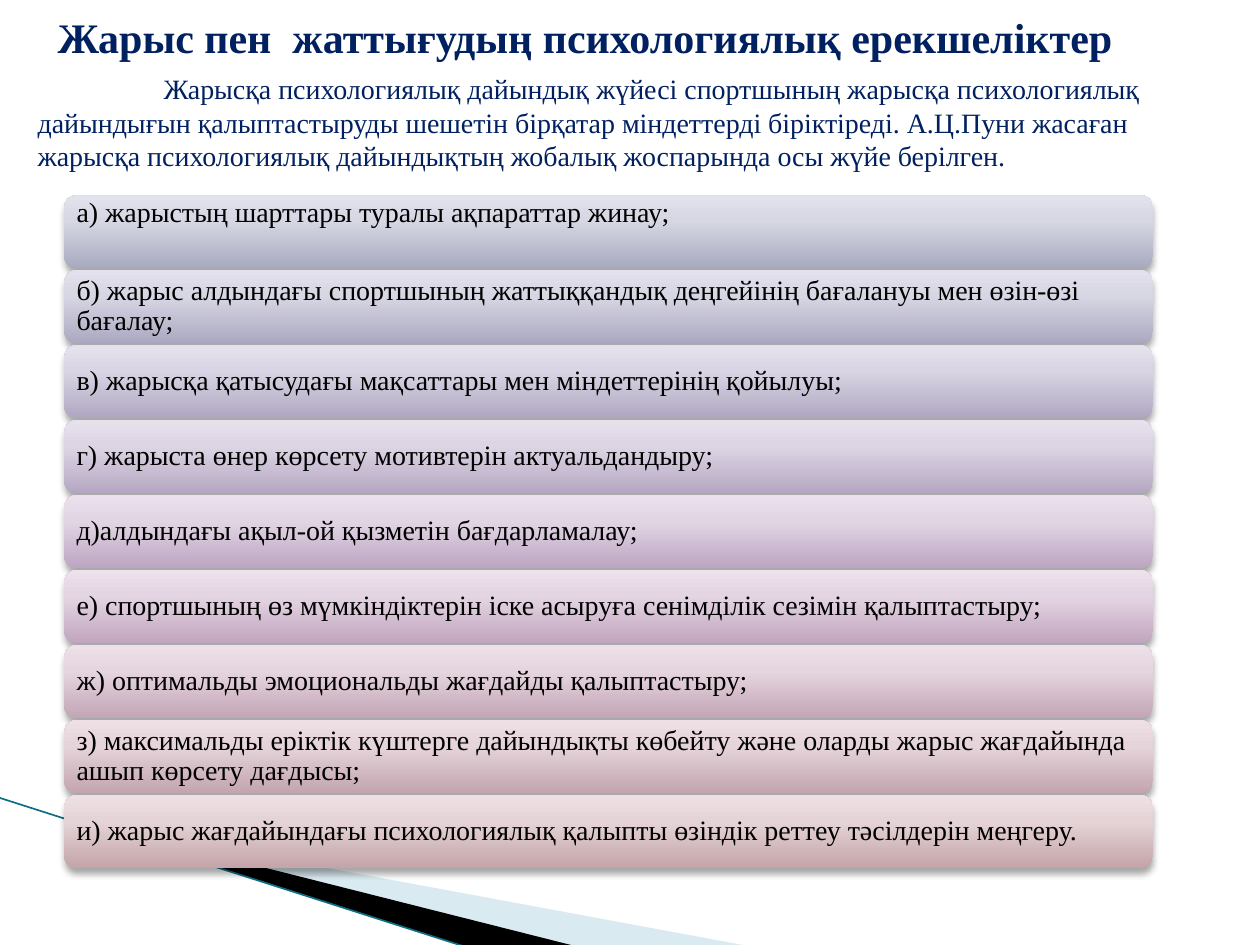
from copy import deepcopy

from lxml import etree
from pptx import Presentation
from pptx.dml.color import RGBColor
from pptx.enum.shapes import MSO_CONNECTOR, MSO_SHAPE
from pptx.enum.text import MSO_ANCHOR, PP_ALIGN
from pptx.oxml import parse_xml
from pptx.oxml.ns import nsdecls, qn
from pptx.util import Inches, Pt

ROUNDED = MSO_SHAPE.ROUNDED_RECTANGLE
STRAIGHT = MSO_CONNECTOR.STRAIGHT
TOP, MIDDLE = MSO_ANCHOR.TOP, MSO_ANCHOR.MIDDLE
LEFT = PP_ALIGN.LEFT

NAVY = RGBColor(0x00, 0x20, 0x60)
BLACK = RGBColor(0x00, 0x00, 0x00)
PALE_BLUE = RGBColor(0xA0, 0xCB, 0xDC)
TEAL = RGBColor(0x0F, 0x6E, 0x84)

TITLE = "Жарыс пен  жаттығудың психологиялық ерекшеліктер"
INTRO = (
    "Жарысқа психологиялық дайындық жүйесі спортшының жарысқа психологиялық "
    "дайындығын қалыптастыруды шешетін бірқатар міндеттерді біріктіреді. "
    "А.Ц.Пуни жасаған жарысқа психологиялық дайындықтың жобалық жоспарында "
    "осы жүйе берілген."
)
TASKS = [
    ("а) жарыстың шарттары туралы ақпараттар жинау;", "A8AAC0 D6D7E3 E2E2EC"),
    ("б) жарыс алдындағы спортшының жаттыққандық деңгейінің бағалануы мен "
     "өзін-өзі бағалау;", "ABA8C1 D7D6E3 E3E1ED"),
    ("в) жарысқа қатысудағы мақсаттары мен міндеттерінің қойылуы;",
     "AFA7C1 DAD5E4 E5E1ED"),
    ("г) жарыста өнер көрсету мотивтерін актуальдандыру;",
     "B5A7C2 DDD5E4 E7E1ED"),
    ("д)алдындағы ақыл-ой қызметін бағдарламалау;", "BDA6C2 E1D5E4 EBE1ED"),
    ("е) спортшының өз мүмкіндіктерін іске асыруға сенімділік сезімін "
     "қалыптастыру;", "C2A6BF E4D5E3 EDE1EC"),
    ("ж) оптимальды эмоциональды жағдайды қалыптастыру;",
     "C3A6B7 E5D5DE EDE0E8"),
    ("з) максимальды еріктік күштерге дайындықты көбейту және оларды жарыс "
     "жағдайында ашып көрсету дағдысы;", "C3A5B0 E5D4DA EEE0E5"),
    ("и) жарыс жағдайындағы психологиялық қалыпты өзіндік реттеу тәсілдерін "
     "меңгеру.", "C4A5A9 E5D4D7 EEE0E2"),
]
BAR_TOP = 1.55
BAR_PITCH = (6.31 - BAR_TOP) / (len(TASKS) - 1)
STOP_POSITIONS = (0, 0.65, 1)
SHADOW = (
    f'<a:effectLst {nsdecls("a")}><a:outerShdw blurRad="{Pt(4)}" '
    f'dist="{Pt(3)}" dir="5400000" rotWithShape="0"><a:srgbClr val="000000">'
    '<a:alpha val="35000"/></a:srgbClr></a:outerShdw></a:effectLst>'
)


class SlideBuilder:
    font = "Times New Roman"

    def __init__(self, s):
        self.s = s

    def set_text(self, sp, text, size, color, bold=False, anchor=MIDDLE):
        tf = sp.text_frame
        tf.word_wrap = True
        tf.vertical_anchor = anchor
        p = tf.paragraphs[0]
        p.text = text
        p.alignment = LEFT
        p.font.name = self.font
        p.font.size = Pt(size)
        p.font.bold = bold
        p.font.color.rgb = color
        return p

    def textbox(self, x, y, w, h, text, size, **style):
        sp = self.s.shapes.add_textbox(Inches(x), Inches(y), Inches(w), Inches(h))
        return self.set_text(sp, text, size, NAVY, **style)

    def wedge(self, points, color, alpha=None):
        start, *rest = [(Inches(x), Inches(y)) for x, y in points]
        builder = self.s.shapes.build_freeform(*start)
        builder.add_line_segments(rest)
        sp = builder.convert_to_shape()
        sp.shadow.inherit = False
        sp.line.fill.background()
        sp.fill.solid()
        sp.fill.fore_color.rgb = color
        if alpha is not None:
            clr = sp._element.spPr.find(".//" + qn("a:srgbClr"))
            etree.SubElement(clr, qn("a:alpha"), val=str(alpha * 1000))

    def line(self, x1, y1, x2, y2, color, width):
        c = self.s.shapes.add_connector(
            STRAIGHT, Inches(x1), Inches(y1), Inches(x2), Inches(y2))
        c.line.color.rgb = color
        c.line.width = Pt(width)
        etree.SubElement(c._element.spPr, qn("a:effectLst"))

    def bar(self, y, text, colors, anchor):
        sp = self.s.shapes.add_shape(
            ROUNDED, Inches(0.51), Inches(y), Inches(8.64), Inches(0.58))
        sp.line.fill.background()
        sp.fill.gradient()
        sp.fill.gradient_angle = 90
        stops = sp._element.spPr.find(".//" + qn("a:gsLst"))
        stops.insert(1, deepcopy(stops[0]))
        for stop, pos, color in zip(
                sp.fill.gradient_stops, STOP_POSITIONS, colors.split()):
            stop.position = pos
            stop.color.rgb = RGBColor.from_string(color)
        sp._element.spPr.append(parse_xml(SHADOW))
        p = self.set_text(sp, text, 16, BLACK, anchor=anchor)
        p.line_spacing = 0.9
        tf = sp.text_frame
        tf.margin_left = tf.margin_right = Inches(0.07)
        tf.margin_top = tf.margin_bottom = 0


def main():
    prs = Presentation()
    prs.slide_width, prs.slide_height = Inches(10), Inches(7.5)
    b = SlideBuilder(prs.slides.add_slide(prs.slide_layouts[6]))

    b.wedge([(0.55, 6.51), (5.95, 7.51), (4.56, 7.51), (0.55, 6.5)],
            PALE_BLUE, alpha=40)
    b.wedge([(0.53, 6.49), (4.57, 7.51), (3.72, 7.52), (0.54, 6.5)], BLACK)
    b.line(-0.01, 6.33, 3.71, 7.52, TEAL, 0.95)

    b.textbox(0.36, -0.1, 9.64, 0.78, TITLE, 24, bold=True)
    p = b.textbox(0.2, 0.52, 9.12, 5.6, INTRO, 16, anchor=TOP)
    p._p.get_or_add_pPr().set("indent", str(Inches(1)))

    for i, (text, colors) in enumerate(TASKS):
        b.bar(BAR_TOP + i * BAR_PITCH, text, colors, MIDDLE if i else TOP)

    prs.save("out.pptx")


if __name__ == "__main__":
    main()
